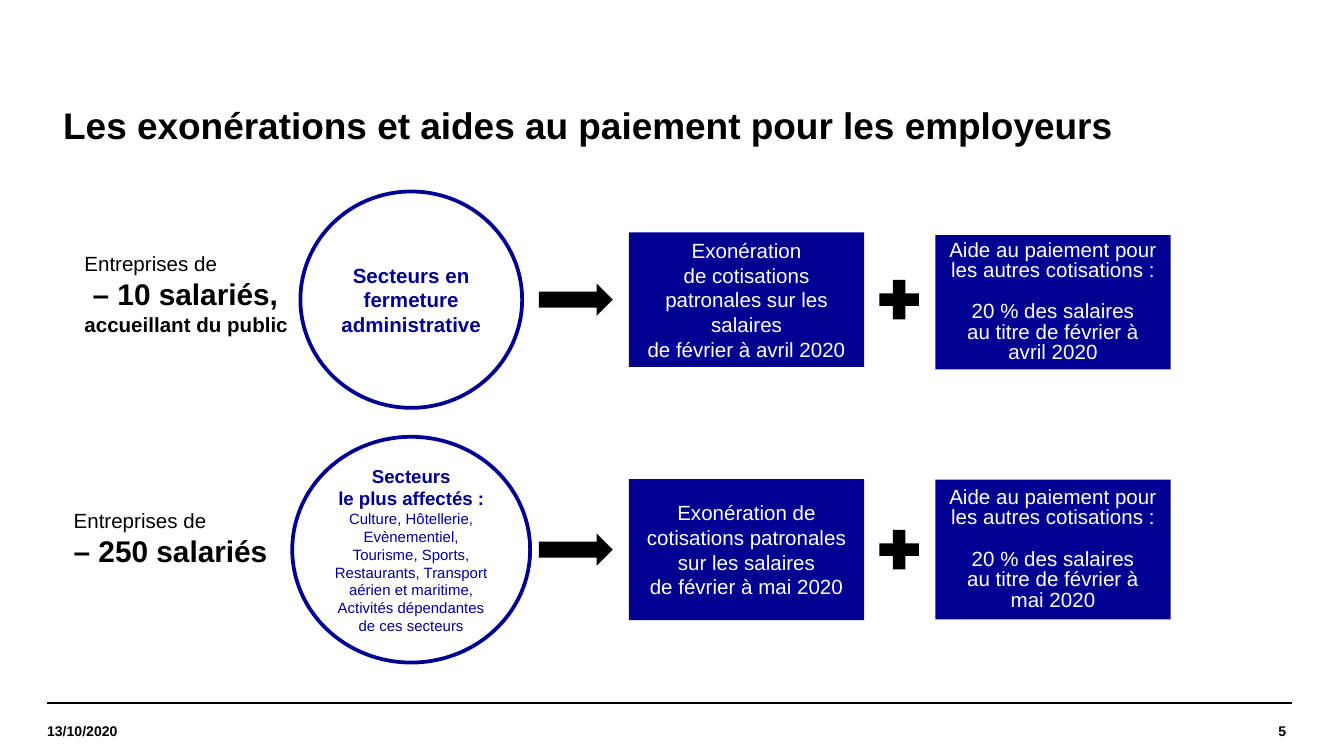
import pptx
import pptx.dml.color
import pptx.enum.shapes
import pptx.enum.text
import pptx.oxml
import pptx.oxml.ns
import pptx.util

Inches = pptx.util.Inches
Pt = pptx.util.Pt
SHAPE = pptx.enum.shapes.MSO_SHAPE
ALIGN = pptx.enum.text.PP_ALIGN
ANCHOR = pptx.enum.text.MSO_ANCHOR

BLUE, BLACK, WHITE = "000091", "000000", "FFFFFF"


def color(value):
    return pptx.dml.color.RGBColor.from_string(value)


def write(shape, paragraphs, text_color=BLACK, align=ALIGN.LEFT, inset=None, spacing=None, gap=None):
    """Fill a shape with paragraphs, each a list of (text, size, bold) lines.

    The gap is the space before every paragraph but the first.
    """
    frame = shape.text_frame
    frame.word_wrap = True
    frame.vertical_anchor = ANCHOR.MIDDLE
    if inset is not None:
        frame.margin_left = frame.margin_right = Inches(inset)
        frame.margin_top = frame.margin_bottom = Inches(inset)
    for index, lines in enumerate(paragraphs):
        paragraph = frame.add_paragraph() if index else frame.paragraphs[0]
        paragraph.alignment = align
        if spacing:
            paragraph.line_spacing = spacing
        if gap and index:
            paragraph.space_before = gap
        for number, (text, size, bold) in enumerate(lines):
            if number:
                paragraph.add_line_break()
            run = paragraph.add_run()
            run.text = text
            run.font.name = "Arial"
            run.font.size = Pt(size)
            run.font.bold = bold
            run.font.color.rgb = color(text_color)


def plain(*lines):
    """One paragraph of regular lines."""
    return [(text, 11, False) for text in lines]


def add_text(slide, left, top, width, height, lines, **options):
    box = slide.shapes.add_textbox(Inches(left), Inches(top), Inches(width), Inches(height))
    write(box, [lines], **options)


def add_centered(slide, kind, left, middle, width, height, fill=None, line=None):
    """Add a preset shape centred vertically on the given height."""
    shape = slide.shapes.add_shape(
        kind, Inches(left), Inches(middle - height / 2), Inches(width), Inches(height))
    shape.shadow.inherit = False
    if fill:
        shape.fill.solid()
        shape.fill.fore_color.rgb = color(fill)
    else:
        shape.fill.background()
    if line:
        shape.line.color.rgb = color(line)
        shape.line.width = Pt(2)
    else:
        shape.line.fill.background()
    return shape


def add_title(slide, left, top, width, height, text):
    title = slide.shapes.title
    title.left, title.top = Inches(left), Inches(top)
    title.width, title.height = Inches(width), Inches(height)
    write(title, [[(text, 19.8, True)]], spacing=0.9)
    title.text_frame.vertical_anchor = ANCHOR.TOP
    title.text_frame.margin_top = 0
    title.text_frame.margin_left = Inches(0.12)


def add_row(slide, middle, label, sector, exemption, support):
    """Company size, sector circle, arrow, exemption, plus sign, payment support."""
    left, offset, width, lines = label
    add_text(slide, left, middle + offset - 0.33, width, 0.65, lines)

    width, height, lines = sector
    circle = add_centered(slide, SHAPE.OVAL, 3.06 - width / 2, middle, width, height, line=BLUE)
    write(circle, [lines], BLUE, ALIGN.CENTER, inset=0.04)

    add_centered(slide, SHAPE.RIGHT_ARROW, 4.01, middle, 0.55, 0.24, BLACK)
    add_centered(slide, SHAPE.MATH_PLUS, 6.49, middle, 0.4, 0.4, BLACK)

    height, paragraphs = exemption
    box = add_centered(slide, SHAPE.RECTANGLE, 4.68, middle, 1.75, height, BLUE)
    write(box, paragraphs, WHITE, ALIGN.CENTER)

    offset, height, period = support
    box = add_centered(slide, SHAPE.RECTANGLE, 6.96, middle + offset, 1.75, height, BLUE)
    write(box, [plain("Aide au paiement pour les autres cotisations :"),
                plain("20 % des salaires", period)],
          WHITE, ALIGN.CENTER, spacing=Pt(11), gap=Pt(11))


def add_footer(slide, left, top, width, date, number):
    for shift in (0, 0.04):
        rule = slide.shapes.add_connector(
            pptx.enum.shapes.MSO_CONNECTOR.STRAIGHT, Inches(left + shift), Inches(top),
            Inches(left + shift + width), Inches(top))
        rule.line.color.rgb = color(BLACK)
        rule.line.width = Pt(0.8)
        rule._element.spPr.append(
            pptx.oxml.parse_xml("<a:effectLst %s/>" % pptx.oxml.ns.nsdecls("a")))
    add_text(slide, left, top + 0.02, 1.28, 0.38, [(date, 7.5, True)], inset=0)
    add_text(slide, left + width - 1.48, top + 0.01, 1.48, 0.39, [(number, 7.5, True)],
             align=ALIGN.RIGHT, inset=0)


def main():
    presentation = pptx.Presentation()
    # Widescreen, 16:9
    presentation.slide_width = Inches(10)
    presentation.slide_height = Inches(10 * 9 / 16)
    slide = presentation.slides.add_slide(presentation.slide_layouts[5])

    add_title(slide, 0.35, 0.8, 9.21, 0.59,
              "Les exonérations et aides au paiement pour les employeurs")

    # Small companies open to the public
    add_row(
        slide, 2.23,
        label=(0.53, -0.04, 1.74, [("Entreprises de", 11, False),
                                   (" – 10 salariés,", 16, True),
                                   ("accueillant du public", 11, True)]),
        sector=(1.65, 1.61, [("Secteurs en fermeture administrative", 11, True)]),
        exemption=(1, [plain("Exonération", "de cotisations patronales sur les salaires"),
                       plain("de février à avril 2020")]),
        support=(0.02, 1, "au titre de février à avril 2020"))

    # Companies in the most affected sectors
    add_row(
        slide, 4.09,
        label=(0.45, -0.08, 1.76, [("Entreprises de", 11, False),
                                   ("– 250 salariés", 16, True)]),
        sector=(1.77, 1.68, [
            ("Secteurs", 10, True),
            ("le plus affectés :", 10, True),
            ("Culture, Hôtellerie, Evènementiel, Tourisme, Sports, Restaurants, Transport "
             "aérien et maritime, Activités dépendantes de ces secteurs", 8, False)]),
        exemption=(1.05, [plain("Exonération de cotisations patronales sur les salaires"),
                          plain("de février à mai 2020")]),
        support=(0, 1.04, "au titre de février à mai 2020"))

    add_footer(slide, 0.35, 5.23, 9.22, "13/10/2020", "5")
    presentation.save("out.pptx")


if __name__ == "__main__":
    main()
